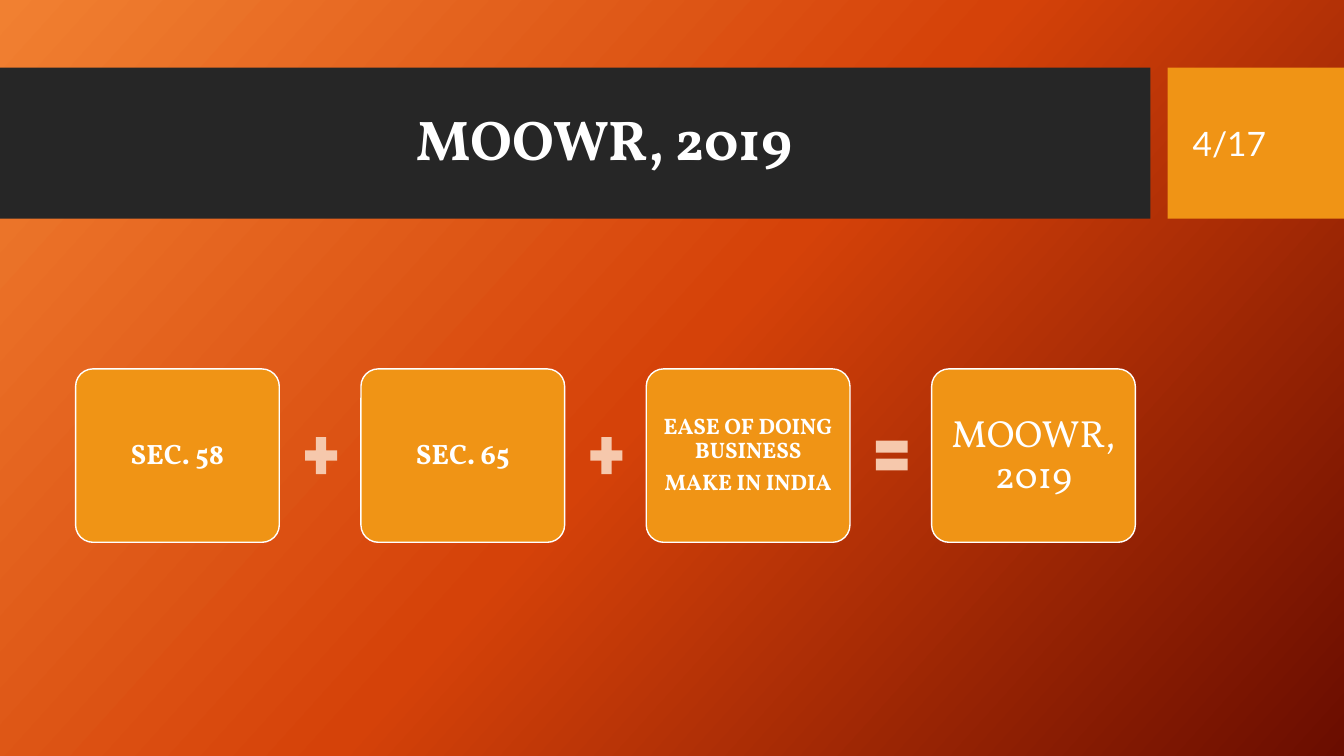
from copy import deepcopy

from pptx import Presentation
from pptx import util as u
from pptx.dml.color import RGBColor
from pptx.enum import shapes, text

WHITE, ORANGE, CHARCOAL, PEACH = "FFFFFF", "F09415", "262626", "F6C8AC"
SERIF, SANS = "Vollkorn", "Lato"


def color(hex_code):
    return RGBColor.from_string(hex_code)


class SlideBuilder:
    def __init__(self, presentation):
        self.slide = presentation.slides.add_slide(presentation.slide_layouts[6])

    def gradient_background(self, stops, clockwise_angle):
        fill = self.slide.background.fill
        fill.gradient()
        stop_list = self.slide.element.xpath(".//a:gsLst")[0]
        while len(stop_list) < len(stops):
            stop_list.append(deepcopy(stop_list[0]))
        for stop, (position, hex_code) in zip(fill.gradient_stops, stops):
            stop.position = position
            stop.color.rgb = color(hex_code)
        fill.gradient_angle = 360 - clockwise_angle

    def shape(self, kind, box, fill, line=None):
        shape = self.slide.shapes.add_shape(kind, *map(u.Inches, box))
        shape.shadow.inherit = False
        shape.fill.solid()
        shape.fill.fore_color.rgb = color(fill)
        if line:
            shape.line.color.rgb = color(line)
            shape.line.width = u.Pt(1)
        else:
            shape.line.fill.background()
        return shape

    def set_text(self, shape, words, size, font=SERIF, bold=False,
                 align=text.PP_ALIGN.CENTER, spacing=0.9, space_after=0,
                 margins=(0.1, 0.05)):
        """Fill a shape with text; space_after is a share of the font size."""
        frame = shape.text_frame
        frame.word_wrap = True
        frame.vertical_anchor = text.MSO_ANCHOR.MIDDLE
        frame.margin_left = frame.margin_right = u.Inches(margins[0])
        frame.margin_top = frame.margin_bottom = u.Inches(margins[1])
        frame.text = words
        for paragraph in frame.paragraphs:
            paragraph.alignment = align
            paragraph.line_spacing = spacing
            paragraph.space_after = u.Pt(size * space_after)
            for run in paragraph.runs:
                run.font.name = font
                run.font.size = u.Pt(size)
                run.font.bold = bold
                run.font.color.rgb = color(WHITE)

    def text_box(self, box, words, size, **style):
        shape = self.slide.shapes.add_textbox(*map(u.Inches, box))
        self.set_text(shape, words, size, **style)

    def card(self, box, words, size, bold, margin):
        card = self.shape(shapes.MSO_SHAPE.ROUNDED_RECTANGLE, box, ORANGE, WHITE)
        card.adjustments[0] = 0.1
        # The rounded corners already inset the text by 0.05 inch.
        self.set_text(card, words, size, bold=bold, space_after=0.35,
                      margins=(margin, margin))


def main():
    presentation = Presentation()
    presentation.slide_width = u.Inches(13.33)
    presentation.slide_height = u.Inches(7.5)
    builder = SlideBuilder(presentation)
    kinds = shapes.MSO_SHAPE

    builder.gradient_background([(0, "F18031"), (0.5, "D54209"), (1, "6A0D00")], 42)
    builder.shape(kinds.RECTANGLE, (0, 0.67, 11.41, 1.5), CHARCOAL)
    builder.shape(kinds.RECTANGLE, (11.58, 0.67, 1.75, 1.5), ORANGE)
    builder.text_box((0.74, 0.82, 10.51, 1.18), "MOOWR, 2019", 40, bold=True)

    equation = [
        ("SEC. 58", 20, True, 0.08, kinds.MATH_PLUS),
        ("SEC. 65", 20, True, 0.08, kinds.MATH_PLUS),
        ("EASE OF DOING BUSINESS\nMAKE IN INDIA", 16, True, 0.07, kinds.MATH_EQUAL),
        ("MOOWR, 2019", 27, False, 0.11, None),
    ]
    for index, (words, size, bold, margin, operator) in enumerate(equation):
        left = 0.75 + index * 2.83
        builder.card((left, 3.66, 2.02, 1.72), words, size, bold, margin)
        if operator:
            builder.shape(operator, (left + 2.22, 4.27, 0.43, 0.5), PEACH)

    builder.text_box((11.73, 0.82, 1.26, 1.19), "4/17", 24, font=SANS,
                     align=text.PP_ALIGN.LEFT, spacing=1.0)
    presentation.save("out.pptx")


if __name__ == "__main__":
    main()
